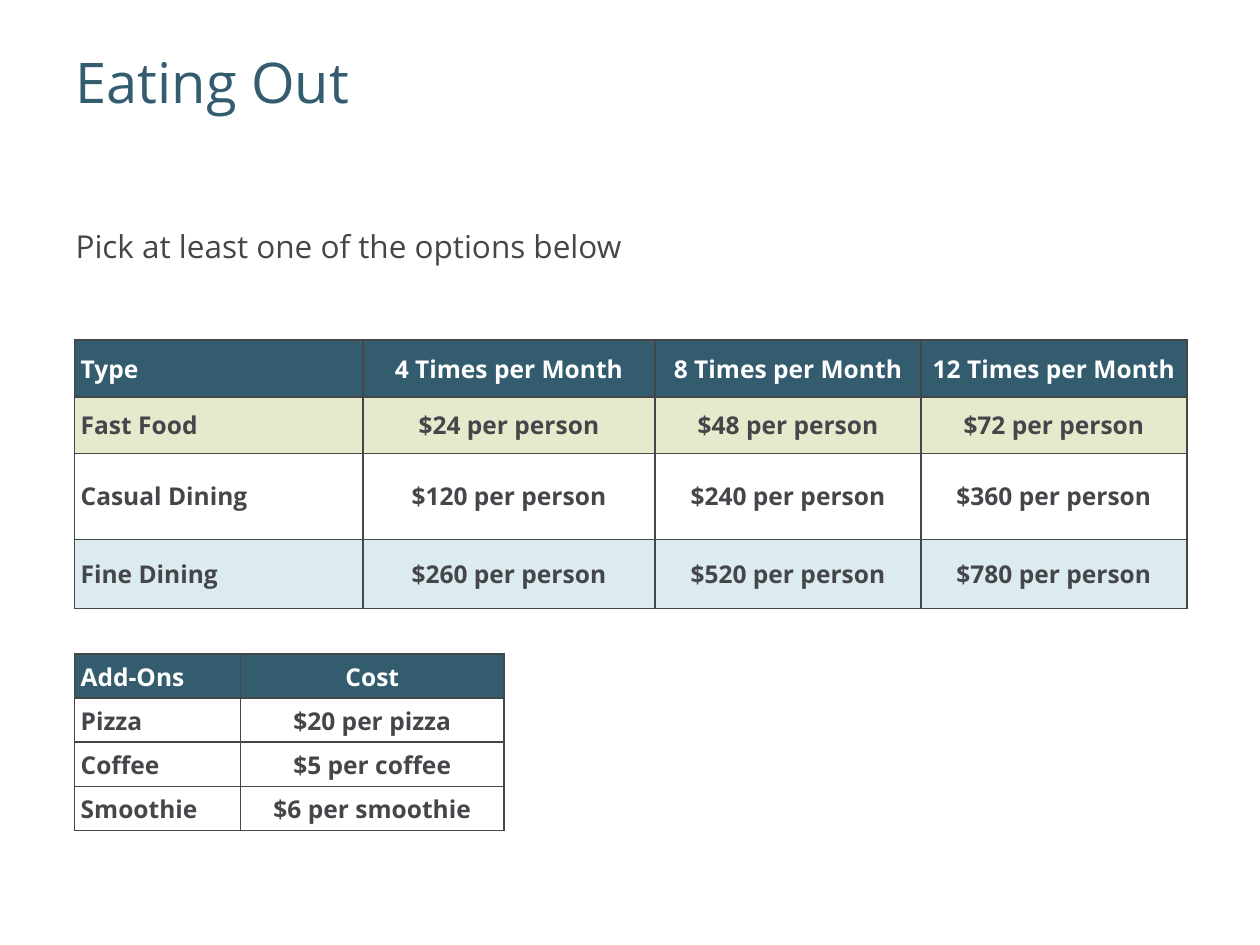
from dataclasses import dataclass

from lxml.etree import SubElement
from pptx import Presentation
from pptx.dml.color import RGBColor
from pptx.enum.text import MSO_ANCHOR, PP_ALIGN
from pptx.oxml.ns import qn
from pptx.slide import Slide
from pptx.table import _Cell
from pptx.util import Inches, Pt

TEAL = RGBColor(0x34, 0x5C, 0x6F)
GRAY = RGBColor(0x44, 0x46, 0x4A)
WHITE = RGBColor(0xFF, 0xFF, 0xFF)
GREEN = RGBColor(0xE6, 0xE9, 0xCC)
BLUE = RGBColor(0xDC, 0xEB, 0xEF)
FONT = "Open Sans"
MARGINS = ("margin_left", "margin_top", "margin_right", "margin_bottom")
CELL_FORMAT = {
    "vertical_anchor": MSO_ANCHOR.MIDDLE,
    **dict.fromkeys(MARGINS, Inches(0.05)),
}
FRAME_FORMAT = {
    "word_wrap": True,
    "vertical_anchor": MSO_ANCHOR.TOP,
    **dict.fromkeys(MARGINS, 0),
}


@dataclass(frozen=True)
class TextBlock:
    text: str
    box: tuple[float, float, float, float]
    size: int
    color: RGBColor
    paragraph_format: dict


@dataclass(frozen=True)
class PriceTable:
    left: float
    top: float
    columns: list[float]
    heights: list[float]
    fills: list[RGBColor]
    rows: list[list[str]]


TEXT_BLOCKS = [
    TextBlock("Eating Out", (0.6, 0.35, 9, 1.25), 32, TEAL, {"line_spacing": 1.05}),
    TextBlock("Pick at least one of the options below", (0.6, 1.8, 5.86, 0.53),
              18, GRAY, {"space_after": Pt(12)}),
]
PRICE_TABLES = [
    PriceTable(
        0.59, 2.7, [2.29, 2.32, 2.11, 2.11], [0.45, 0.45, 0.68, 0.55],
        [TEAL, GREEN, WHITE, BLUE],
        [
            ["Type", "4 Times per Month", "8 Times per Month", "12 Times per Month"],
            ["Fast Food", "$24 per person", "$48 per person", "$72 per person"],
            ["Casual Dining", "$120 per person", "$240 per person", "$360 per person"],
            ["Fine Dining", "$260 per person", "$520 per person", "$780 per person"],
        ],
    ),
    PriceTable(
        0.59, 5.19, [1.32, 2.09], [0.35] * 4,
        [TEAL, WHITE, WHITE, WHITE],
        [
            ["Add-Ons", "Cost"],
            ["Pizza", "$20 per pizza"],
            ["Coffee", "$5 per coffee"],
            ["Smoothie", "$6 per smoothie"],
        ],
    ),
]


def apply_format(target: object, values: dict) -> None:
    for name, value in values.items():
        setattr(target, name, value)


def write_text(paragraph, text: str, size: int, color: RGBColor, bold: bool) -> None:
    run = paragraph.add_run()
    run.text = text
    apply_format(run.font, {"name": FONT, "size": Pt(size), "bold": bold})
    run.font.color.rgb = color


def draw_text(slide: Slide, block: TextBlock) -> None:
    shape = slide.shapes.add_textbox(*map(Inches, block.box))
    apply_format(shape.text_frame, FRAME_FORMAT)
    paragraph = shape.text_frame.paragraphs[0]
    apply_format(paragraph, block.paragraph_format)
    write_text(paragraph, block.text, block.size, block.color, False)


def add_borders(cell: _Cell) -> None:
    properties = cell._tc.get_or_add_tcPr()
    for side in ("lnL", "lnR", "lnT", "lnB"):
        line = SubElement(properties, qn(f"a:{side}"), w=str(Pt(1)))
        fill = SubElement(line, qn("a:solidFill"))
        SubElement(fill, qn("a:srgbClr"), val=str(GRAY))


def draw_cell(cell: _Cell, text: str, fill: RGBColor, color: RGBColor,
              alignment: PP_ALIGN) -> None:
    apply_format(cell, CELL_FORMAT)
    add_borders(cell)
    cell.fill.solid()
    cell.fill.fore_color.rgb = fill
    paragraph = cell.text_frame.paragraphs[0]
    paragraph.alignment = alignment
    write_text(paragraph, text, 14, color, True)


def draw_table(slide: Slide, prices: PriceTable) -> None:
    table = slide.shapes.add_table(
        len(prices.rows), len(prices.columns),
        Inches(prices.left), Inches(prices.top),
        Inches(sum(prices.columns)), Inches(sum(prices.heights)),
    ).table
    for column, width in zip(table.columns, prices.columns):
        column.width = Inches(width)
    for row, height in zip(table.rows, prices.heights):
        row.height = Inches(height)
    for row_index, (texts, fill) in enumerate(zip(prices.rows, prices.fills)):
        color = GRAY if row_index else WHITE
        for column_index, text in enumerate(texts):
            alignment = PP_ALIGN.CENTER if column_index else PP_ALIGN.LEFT
            draw_cell(table.cell(row_index, column_index), text, fill, color, alignment)


def main() -> None:
    presentation = Presentation()
    apply_format(presentation, {"slide_width": Inches(10), "slide_height": Inches(7.5)})
    slide = presentation.slides.add_slide(presentation.slide_layouts[6])
    for block in TEXT_BLOCKS:
        draw_text(slide, block)
    for prices in PRICE_TABLES:
        draw_table(slide, prices)
    presentation.save("out.pptx")


if __name__ == "__main__":
    main()
